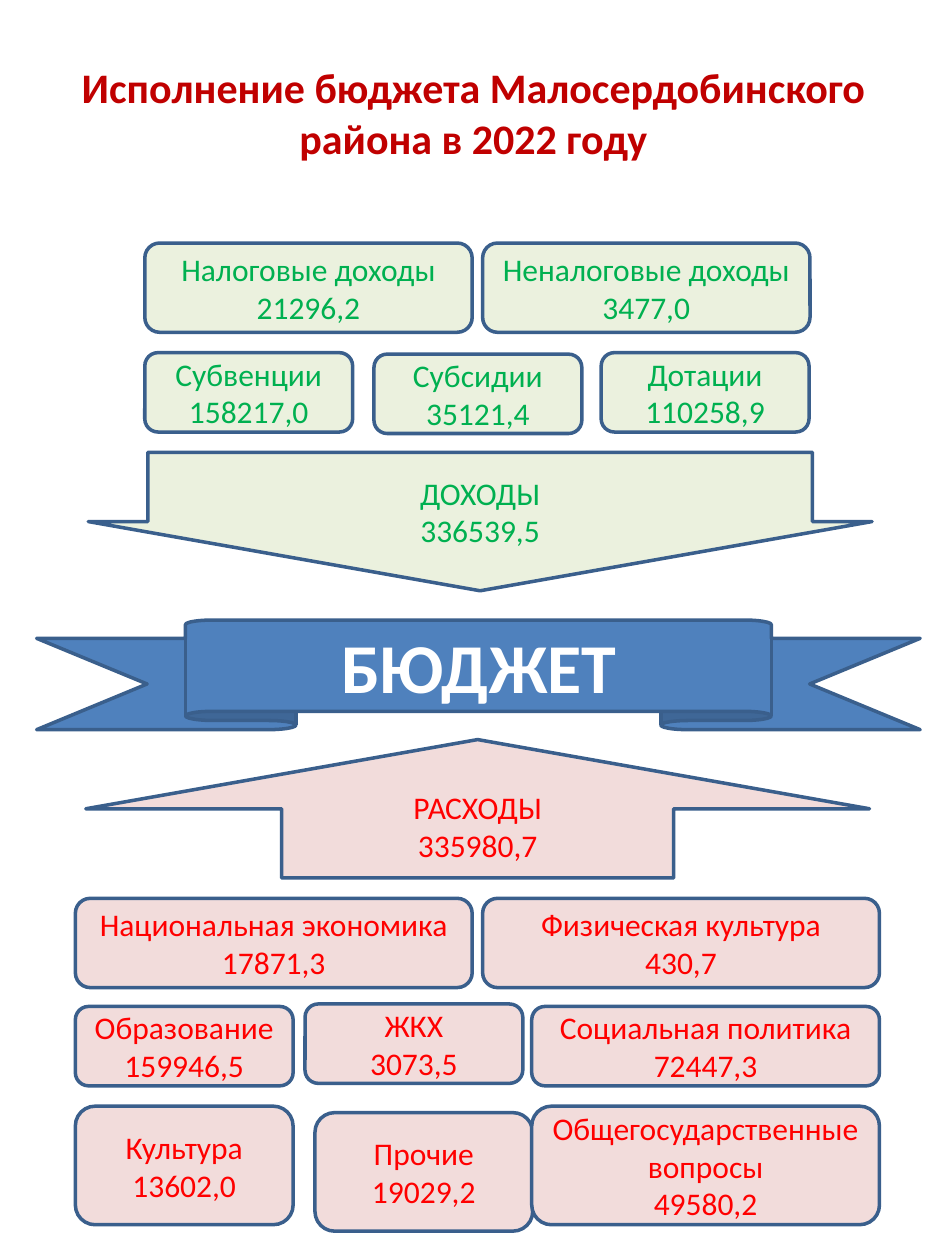
import pptx
import pptx.util
import pptx.dml.color
import pptx.enum.shapes
import pptx.enum.text
from dataclasses import dataclass
from typing import Any

Cm = pptx.util.Cm
Kind = pptx.enum.shapes.MSO_SHAPE
Align = pptx.enum.text.PP_ALIGN
Anchor = pptx.enum.text.MSO_ANCHOR


@dataclass(frozen=True)
class Tone:
    fill: str
    text: str
    size: int = 18
    bold: bool = False


@dataclass(frozen=True)
class Theme:
    font: str = "Calibri"
    edge: str = "3A5F8C"
    width: int = 2
    title: Tone = Tone("FFFFFF", "C00000", 24, True)
    income: Tone = Tone("EBF1DE", "00B050")
    spend: Tone = Tone("F2DCDB", "FF0000")
    budget: Tone = Tone("4F81BD", "FFFFFF", 40, True)


@dataclass(frozen=True)
class Box:
    left: float
    top: float
    wide: float
    high: float
    lines: tuple[str, ...]
    tone: Tone
    kind: Any = Kind.ROUNDED_RECTANGLE
    adjust: tuple[float, ...] = ()
    inset: float = 0.13  # top margin of the text


THEME = Theme()


def color(code: str) -> pptx.dml.color.RGBColor:
    return pptx.dml.color.RGBColor.from_string(code)


def write(shape: Any, lines: tuple[str, ...], tone: Tone) -> None:
    frame = shape.text_frame
    frame.word_wrap = True
    frame.vertical_anchor = Anchor.MIDDLE
    frame.text = "\n".join(lines)
    for para in frame.paragraphs:
        para.alignment = Align.CENTER
        para.font.name = THEME.font
        para.font.size = pptx.util.Pt(tone.size)
        para.font.bold = tone.bold
        para.font.color.rgb = color(tone.text)


def place(shape: Any, left: float, top: float, wide: float, high: float) -> None:
    shape.left, shape.top = Cm(left), Cm(top)
    shape.width, shape.height = Cm(wide), Cm(high)


def draw(slide: Any, box: Box) -> None:
    shape = slide.shapes.add_shape(box.kind, 0, 0, 0, 0)
    place(shape, box.left, box.top, box.wide, box.high)
    for index, value in enumerate(box.adjust):
        shape.adjustments[index] = value
    shape.shadow.inherit = False
    shape.fill.solid()
    shape.fill.fore_color.rgb = color(box.tone.fill)
    shape.line.color.rgb = color(THEME.edge)
    shape.line.width = pptx.util.Pt(THEME.width)
    write(shape, box.lines, box.tone)
    shape.text_frame.margin_top = Cm(box.inset)


def income(left: float, top: float, wide: float, high: float, *lines: str) -> Box:
    return Box(left, top, wide, high, lines, THEME.income)


def spend(left: float, top: float, wide: float, high: float, *lines: str) -> Box:
    return Box(left, top, wide, high, lines, THEME.spend)


BOXES = (
    # Income: sources and the arrow down to the budget
    Box(1.78, 9.12, 15.8, 2.79, ("ДОХОДЫ", "336539,5"), THEME.income,
        Kind.DOWN_ARROW, (0.848, 0.5), 0.9),
    income(2.92, 4.9, 6.6, 1.8, "Налоговые доходы", "21296,2"),
    income(9.73, 4.9, 6.6, 1.8, "Неналоговые доходы", "3477,0"),
    income(2.92, 7.11, 4.19, 1.6, "Субвенции", "158217,0"),
    income(7.54, 7.14, 4.19, 1.6, "Субсидии", "35121,4"),
    income(12.12, 7.11, 4.19, 1.6, "Дотации", "110258,9"),
    # Budget ribbon
    Box(0.74, 12.5, 17.81, 2.21, ("БЮДЖЕТ",), THEME.budget,
        Kind.UP_RIBBON, (0.167, 0.663)),
    # Spending: the arrow up to the budget and its items
    Box(1.73, 14.91, 15.8, 2.79, ("РАСХОДЫ", "335980,7"), THEME.spend,
        Kind.UP_ARROW, (0.5, 0.5)),
    spend(1.52, 18.11, 8, 1.8, "Национальная экономика", "17871,3"),
    spend(9.73, 18.11, 8, 1.8, "Физическая культура", "430,7"),
    spend(1.52, 20.29, 4.39, 1.6, "Образование", "159946,5"),
    spend(6.15, 20.24, 4.39, 1.6, "ЖКХ", "3073,5"),
    spend(10.72, 20.29, 7.01, 1.6, "Социальная политика", "72447,3"),
    spend(1.52, 22.3, 4.39, 2.39, "Культура", "13602,0"),
    spend(6.35, 22.43, 4.39, 2.39, "Прочие", "19029,2"),
    spend(10.72, 22.3, 7.01, 2.39, "Общегосударственные вопросы", "49580,2"),
)


def main() -> None:
    deck = pptx.Presentation()
    deck.slide_width, deck.slide_height = Cm(19.05), Cm(25.4)
    slide = deck.slides.add_slide(deck.slide_layouts[5])

    # Title
    title = slide.shapes.title
    place(title, 0.97, 1.02, 17.15, 2.49)
    write(title, ("Исполнение бюджета Малосердобинского района в 2022 году",), THEME.title)

    for box in BOXES:
        draw(slide, box)
    deck.save("out.pptx")


if __name__ == "__main__":
    main()
